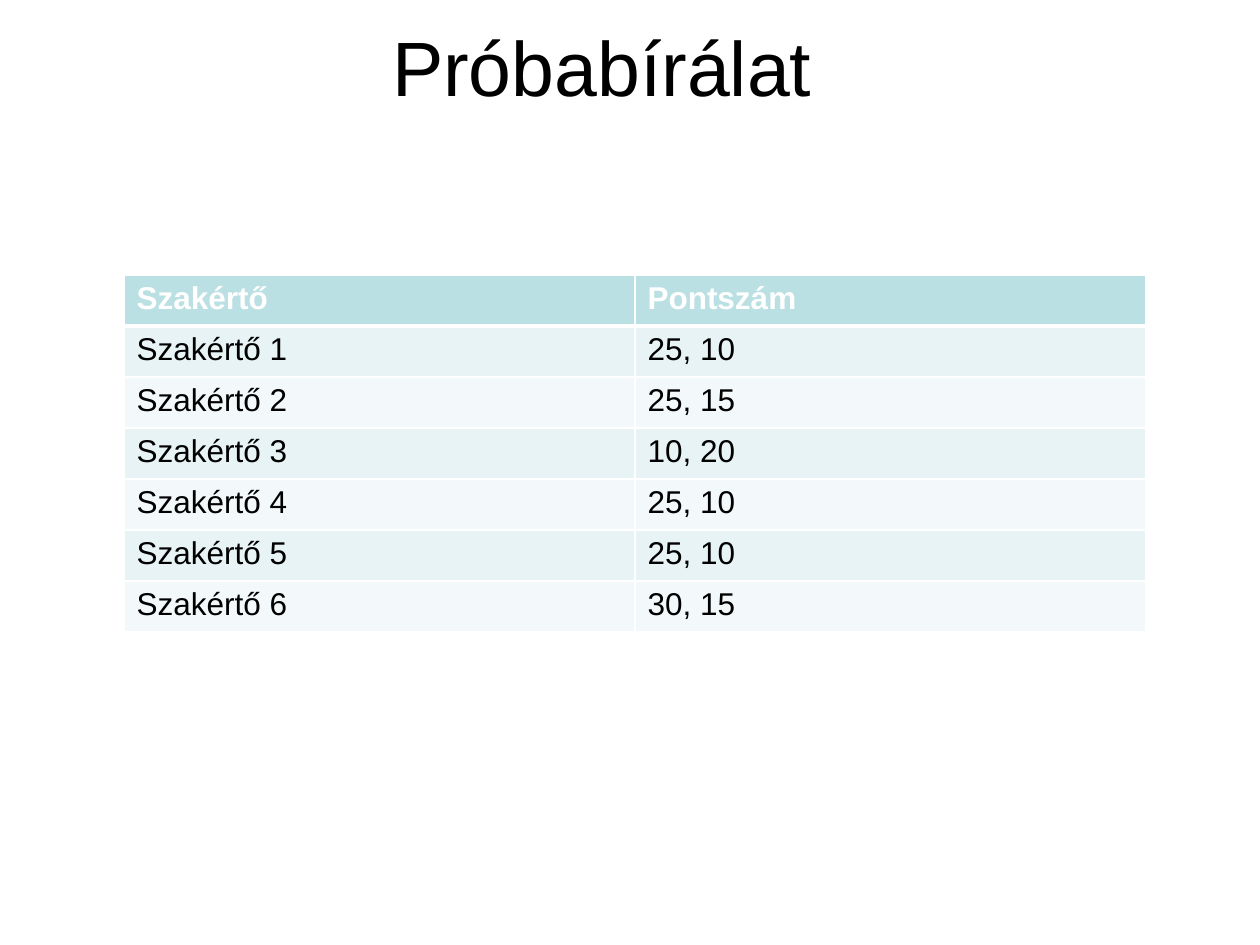
from dataclasses import dataclass

import pptx
import pptx.dml.color
import pptx.enum.text
import pptx.oxml
import pptx.oxml.ns
import pptx.util

EMU_PER_PX = 914400 / 126
FONT = "Arial"
COLUMN_WIDTH = 511
ROW_HEIGHT = 51


@dataclass(frozen=True)
class RowStyle:
    fill: str
    text: str
    bold: bool = False
    top: int = 1
    bottom: int = 1


HEADER = RowStyle("BBE0E3", "FFFFFF", bold=True, bottom=3)
FIRST = RowStyle("E7F3F4", "000000", top=3)
ODD = RowStyle("E7F3F4", "000000")
EVEN = RowStyle("F3F9FA", "000000")

ROWS = [
    ("Szakértő", "Pontszám"),
    ("Szakértő 1", "25, 10"),
    ("Szakértő 2", "25, 15"),
    ("Szakértő 3", "10, 20"),
    ("Szakértő 4", "25, 10"),
    ("Szakértő 5", "25, 10"),
    ("Szakértő 6", "30, 15"),
]


def px(length: int) -> pptx.util.Emu:
    return pptx.util.Emu(round(length * EMU_PER_PX))


def color(value: str) -> pptx.dml.color.RGBColor:
    return pptx.dml.color.RGBColor.from_string(value)


def format_text(text_frame, size: int, text_color: str, bold: bool = False) -> None:
    for paragraph in text_frame.paragraphs:
        for run in paragraph.runs:
            run.font.name = FONT
            run.font.size = pptx.util.Pt(size)
            run.font.bold = bold
            run.font.color.rgb = color(text_color)


def add_border(cell, side: str, points: int) -> None:
    cell._tc.get_or_add_tcPr().append(pptx.oxml.parse_xml(
        f'<a:{side} {pptx.oxml.ns.nsdecls("a")} w="{pptx.util.Pt(points)}">'
        f'<a:solidFill><a:srgbClr val="FFFFFF"/></a:solidFill></a:{side}>'))


def fill_cell(cell, text: str, style: RowStyle) -> None:
    # Borders come before the fill in the cell properties
    for side, points in (("lnL", 1), ("lnR", 1),
                         ("lnT", style.top), ("lnB", style.bottom)):
        add_border(cell, side, points)
    cell.fill.solid()
    cell.fill.fore_color.rgb = color(style.fill)
    cell.text_frame.text = text
    format_text(cell.text_frame, 18, style.text, style.bold)


def row_style(index: int) -> RowStyle:
    if index < 2:
        return (HEADER, FIRST)[index]
    return ODD if index % 2 else EVEN


def add_title(slide, text: str) -> None:
    title = slide.shapes.title
    title.left, title.top, title.width, title.height = map(px, (25, 26, 1154, 79))
    text_frame = title.text_frame
    text_frame.text = text
    text_frame.vertical_anchor = pptx.enum.text.MSO_ANCHOR.MIDDLE
    text_frame.auto_size = pptx.enum.text.MSO_AUTO_SIZE.NONE
    text_frame.paragraphs[0].alignment = pptx.enum.text.PP_ALIGN.CENTER
    format_text(text_frame, 44, "000000")


def add_score_table(slide) -> None:
    column_count = len(ROWS[0])
    table = slide.shapes.add_table(
        len(ROWS), column_count, px(124), px(275),
        px(COLUMN_WIDTH * column_count), px(ROW_HEIGHT * len(ROWS))).table
    for column in table.columns:
        column.width = px(COLUMN_WIDTH)
    for index, texts in enumerate(ROWS):
        table.rows[index].height = px(ROW_HEIGHT)
        for cell, text in zip(table.rows[index].cells, texts):
            fill_cell(cell, text, row_style(index))


def main() -> None:
    presentation = pptx.Presentation()
    presentation.slide_width = px(1260)
    presentation.slide_height = px(945)
    # Layout 5 holds only a title
    slide = presentation.slides.add_slide(presentation.slide_layouts[5])
    add_title(slide, "Próbabírálat")
    add_score_table(slide)
    presentation.save("out.pptx")


if __name__ == "__main__":
    main()
